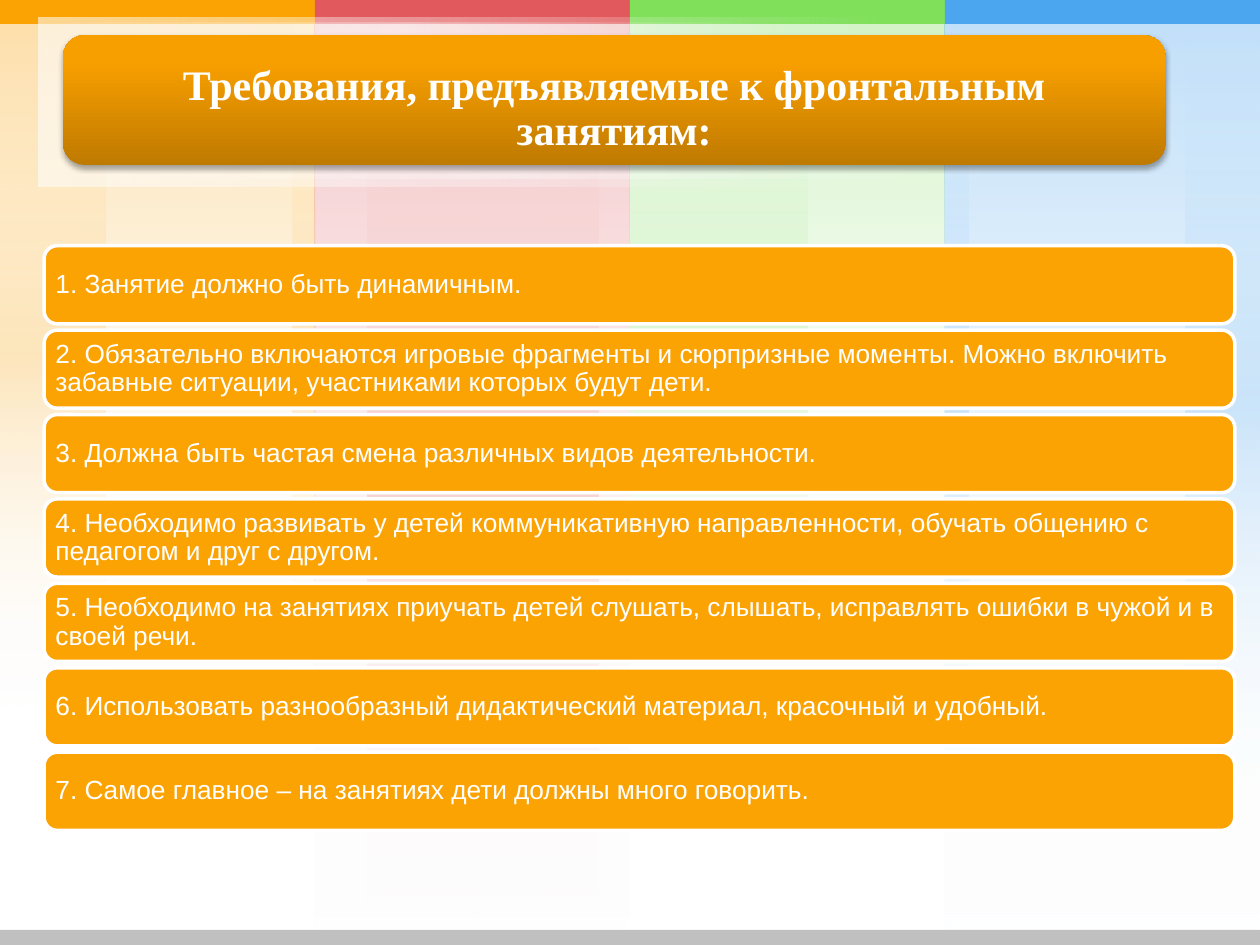
from lxml.etree import SubElement
from pptx import Presentation
from pptx.dml.color import RGBColor
from pptx.enum.shapes import MSO_SHAPE as Preset
from pptx.enum.text import MSO_ANCHOR as Anchor, PP_ALIGN as Align
from pptx.oxml.ns import qn
from pptx.util import Inches, Pt

ORANGE, RED, GREEN, BLUE, WHITE = "FCA304", "E1595C", "80E05A", "4BA5EF", "FFFFFF"

TITLE = "Требования, предъявляемые к фронтальным занятиям:"
REQUIREMENTS = [
    "Занятие должно быть динамичным.",
    "Обязательно включаются игровые фрагменты и сюрпризные моменты. Можно включить забавные ситуации, участниками которых будут дети.",
    "Должна быть частая смена различных видов деятельности.",
    "Необходимо развивать у детей коммуникативную направленности, обучать общению с педагогом и друг с другом.",
    "Необходимо на занятиях приучать детей слушать, слышать, исправлять ошибки в чужой и в своей речи.",
    "Использовать разнообразный дидактический материал, красочный и удобный.",
    "Самое главное – на занятиях дети должны много говорить.",
]
COLUMNS = [
    {"color": ORANGE, "height": 5.62, "strips": [(2.32, 0.18), (0, 0.84)], "strip_height": 5.62},
    {"color": RED, "height": 7.5, "strips": [(0.42, 1.83)], "strip_height": 7.5},
    {"color": GREEN, "height": 5.62, "strips": [(0, 1.41)], "strip_height": 5.62},
    {"color": BLUE, "height": 7.47, "strips": [(0, 0.19), (1.91, 0.59)], "strip_height": 6.37},
]
COLUMN_WIDTH, BAR_HEIGHT = 2.5, 0.19
GLOW = [(0, WHITE, 35), (100, WHITE, 0)]
GLOW_STRIP = [(0, WHITE, 0), (50, WHITE, 35), (100, WHITE, 0)]
GLOWS = [
    ((0.31, 1.31, 7.65, 0.11), GLOW_STRIP),
    ((0.31, 0.14, 6.83, 1.34), GLOW),
    ((0.31, 0.18, 5.83, 0.32), GLOW_STRIP),
    ((0.31, 0.14, 6.83, 1.34), GLOW),
]
TITLE_STOPS = [(0, "BF7A00", 100), (80, "F89F00", 100), (100, "F9A000", 100)]
TITLE_FRAME = {"margin_left": Inches(0.2), "margin_right": Inches(0.2),
               "margin_top": Inches(0.2), "margin_bottom": Inches(0.05)}
TITLE_FONT = {"name": "Times New Roman", "size": Pt(24), "bold": True}
ROW_FRAME = {"margin_" + side: Inches(0.06) for side in ("left", "right", "top", "bottom")}
ROW_FONT = {"name": "Arial", "size": Pt(15), "bold": False}
FIRST_ROW, ROW_PITCH, ROW_HEIGHT = 1.95, 0.67, 0.62

deck = Presentation()
deck.slide_width, deck.slide_height = Inches(10), Inches(7.5)
slide = deck.slides.add_slide(deck.slide_layouts[6])


def rgb(color):
    return RGBColor.from_string(color)


def set_all(target, values):
    for key, value in values.items():
        setattr(target, key, value)


def add_box(box, color, preset=Preset.RECTANGLE):
    shape = slide.shapes.add_shape(preset, *map(Inches, box))
    shape.shadow.inherit = False
    shape.line.fill.background()
    shape.fill.solid()
    shape.fill.fore_color.rgb = rgb(color)
    return shape


def add_color(parent, color, opacity):
    node = SubElement(parent, qn("a:srgbClr"), val=color)
    if opacity < 100:
        SubElement(node, qn("a:alpha"), val=str(opacity * 1000))


def set_gradient(shape, stops, angle):
    properties = shape.element.spPr
    gradient = SubElement(properties, qn("a:gradFill"), rotWithShape="1")
    stop_list = SubElement(gradient, qn("a:gsLst"))
    for position, color, opacity in stops:
        stop = SubElement(stop_list, qn("a:gs"), pos=str(position * 1000))
        add_color(stop, color, opacity)
    SubElement(gradient, qn("a:lin"), ang=str(angle * 60000), scaled="0")
    properties.replace(properties.find(qn("a:solidFill")), gradient)


def write(shape, text, align, frame_format, font_format):
    frame = shape.text_frame
    set_all(frame, {"word_wrap": True, "vertical_anchor": Anchor.MIDDLE, **frame_format})
    paragraph = frame.paragraphs[0]
    set_all(paragraph, {"alignment": align, "line_spacing": 0.9})
    run = paragraph.add_run()
    run.text = text
    set_all(run.font, font_format)
    run.font.color.rgb = rgb(WHITE)


for index, column in enumerate(COLUMNS):
    left, color = index * COLUMN_WIDTH, column["color"]
    sheet = ((left, 0, COLUMN_WIDTH, column["height"]), [(0, color, 20), (100, WHITE, 0)])
    strip_stops = [(0, WHITE, 0), (50, color, 20), (100, WHITE, 0)]
    strips = [((left + offset, 0, width, column["strip_height"]), strip_stops)
              for offset, width in column["strips"]]
    for box, stops in [sheet, *strips, sheet]:
        set_gradient(add_box(box, color), stops, 90)

for index, column in enumerate(COLUMNS):
    add_box((index * COLUMN_WIDTH, 0, COLUMN_WIDTH, BAR_HEIGHT), column["color"])
for box, stops in GLOWS:
    set_gradient(add_box(box, WHITE), stops, 0)
add_box((0, 7.38, 10, 0.12), "C0C0C0")

banner = add_box((0.5, 0.28, 8.75, 1.03), ORANGE, Preset.ROUNDED_RECTANGLE)
set_gradient(banner, TITLE_STOPS, 270)
shadow = SubElement(banner.element.spPr.find(qn("a:effectLst")), qn("a:outerShdw"),
                    blurRad=str(Pt(3.1)), dist=str(Pt(1.8)), dir="5400000", rotWithShape="0")
add_color(shadow, "000000", 35)
write(banner, TITLE, Align.CENTER, TITLE_FRAME, TITLE_FONT)

for index, requirement in enumerate(REQUIREMENTS):
    row = add_box((0.35, FIRST_ROW + index * ROW_PITCH, 9.45, ROW_HEIGHT), ORANGE, Preset.ROUNDED_RECTANGLE)
    row.line.color.rgb = rgb(WHITE)
    row.line.width = Pt(2)
    write(row, f"{index + 1}. {requirement}", Align.LEFT, ROW_FRAME, ROW_FONT)

deck.save("out.pptx")
